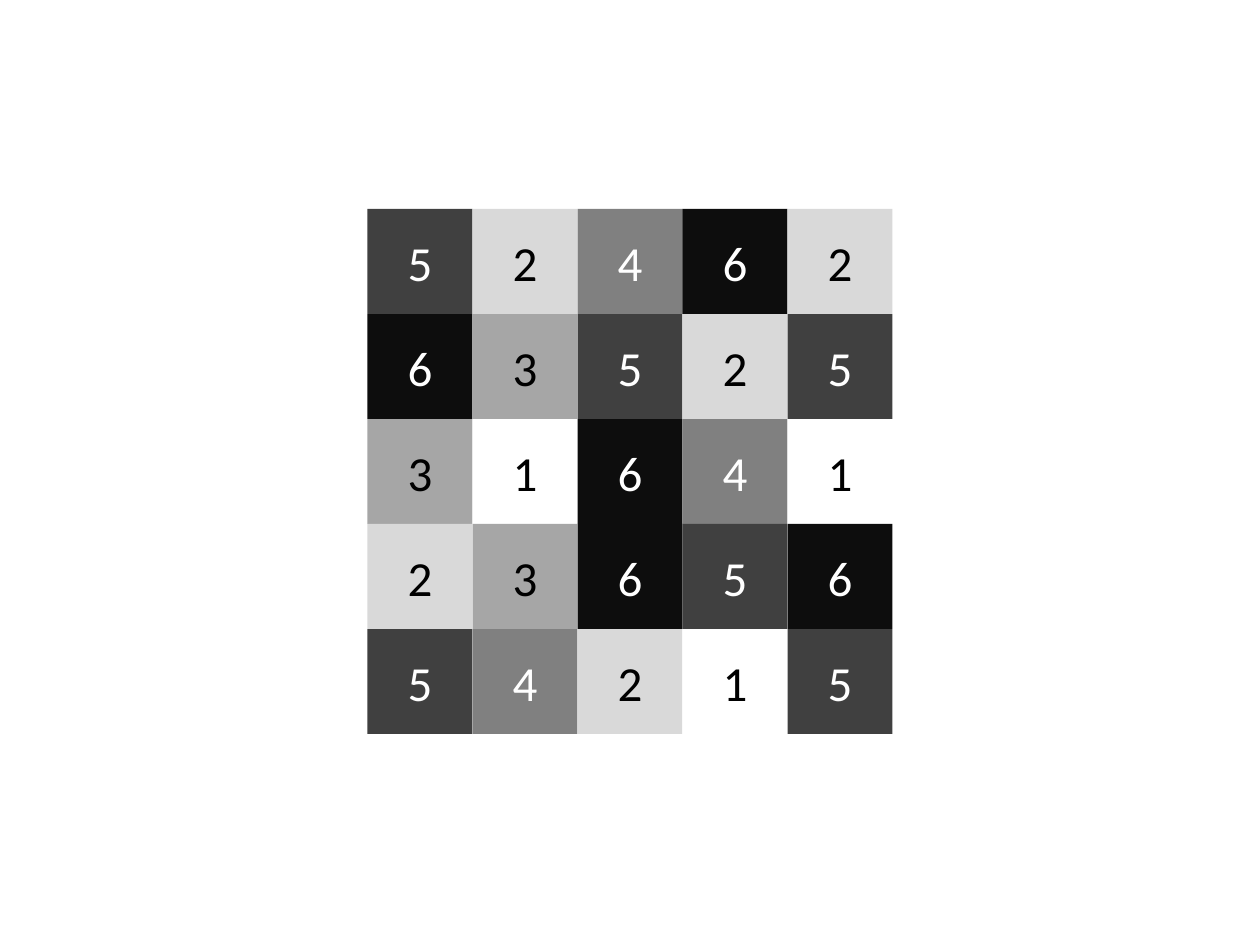
"""Build a slide with a 5 by 5 grid of grey levels, each cell labelled with its value."""
from pptx import Presentation
from pptx.dml.color import RGBColor
from pptx.enum.shapes import MSO_SHAPE
from pptx.enum.text import MSO_ANCHOR, PP_ALIGN
from pptx.util import Pt

LEVELS = [
    [5, 2, 4, 6, 2],
    [6, 3, 5, 2, 5],
    [3, 1, 6, 4, 1],
    [2, 3, 6, 5, 6],
    [5, 4, 2, 1, 5],
]

BLACK = RGBColor(0x00, 0x00, 0x00)
WHITE = RGBColor(0xFF, 0xFF, 0xFF)
STYLES = {
    1: (WHITE, BLACK),
    2: (RGBColor(0xD9, 0xD9, 0xD9), BLACK),
    3: (RGBColor(0xA6, 0xA6, 0xA6), BLACK),
    4: (RGBColor(0x80, 0x80, 0x80), WHITE),
    5: (RGBColor(0x40, 0x40, 0x40), WHITE),
    6: (RGBColor(0x0D, 0x0D, 0x0D), WHITE),
}

PX = 914400 / 126
SLIDE_W, SLIDE_H = 1260, 945
CELL = 105
GRID_TOP = 209
GRID_LEFT = (SLIDE_W - CELL * len(LEVELS[0])) / 2


def px(n):
    return round(n * PX)


def add_cell(shapes, row, col, level):
    fill, ink = STYLES[level]
    sp = shapes.add_shape(
        MSO_SHAPE.RECTANGLE,
        px(GRID_LEFT + col * CELL), px(GRID_TOP + row * CELL), px(CELL), px(CELL),
    )
    sp.shadow.inherit = False
    sp.fill.solid()
    sp.fill.fore_color.rgb = fill
    sp.line.fill.background()
    tf = sp.text_frame
    tf.vertical_anchor = MSO_ANCHOR.MIDDLE
    p = tf.paragraphs[0]
    p.text = str(level)
    p.alignment = PP_ALIGN.CENTER
    p.font.name = "Calibri"
    p.font.size = Pt(28)
    p.font.color.rgb = ink


def main():
    prs = Presentation()
    prs.slide_width, prs.slide_height = px(SLIDE_W), px(SLIDE_H)
    s = prs.slides.add_slide(prs.slide_layouts[6])
    grid = s.shapes.add_group_shape()
    for row, levels in enumerate(LEVELS):
        for col, level in enumerate(levels):
            add_cell(grid.shapes, row, col, level)
    prs.save("out.pptx")


if __name__ == "__main__":
    main()
